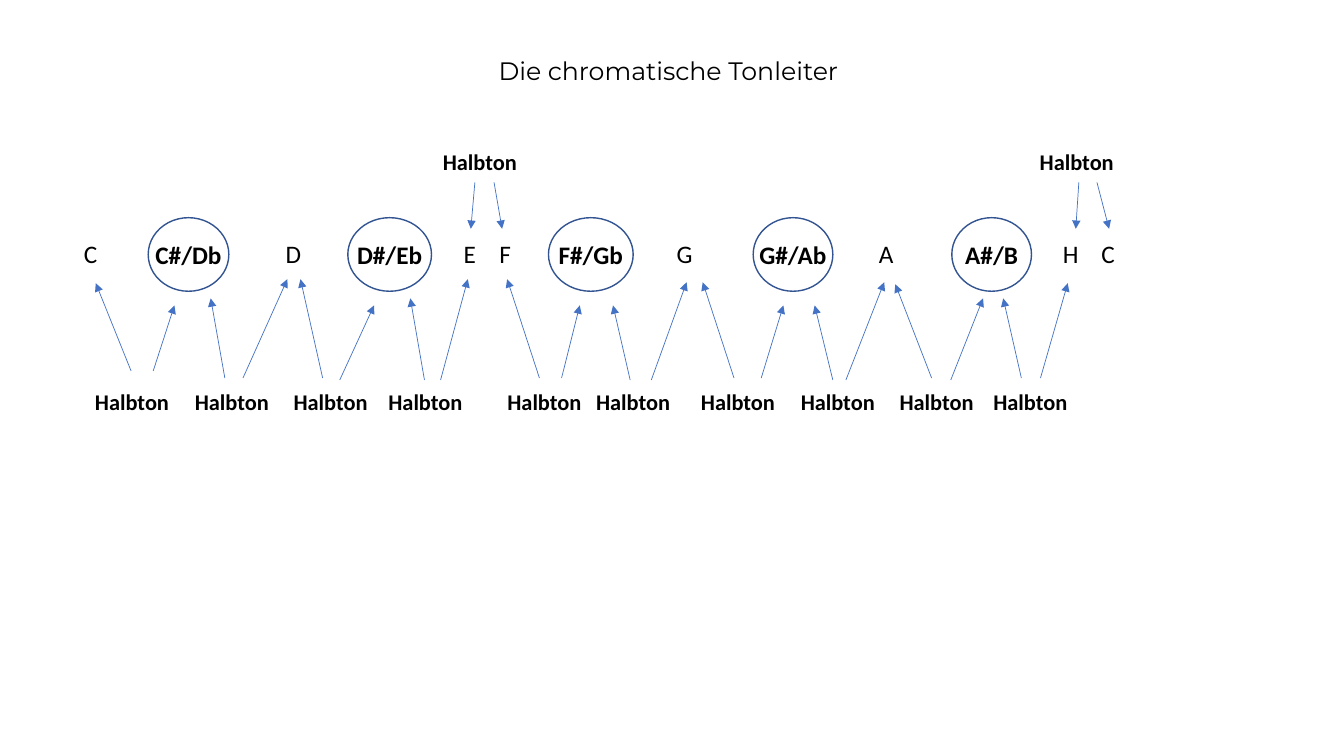
from dataclasses import dataclass
from lxml import etree
from pptx import Presentation
from pptx import util as u
from pptx.dml.color import RGBColor
from pptx.enum import shapes, text
from pptx.oxml.ns import qn


@dataclass(frozen=True)
class Theme:
    ink: RGBColor = RGBColor.from_string("000000")
    ring: RGBColor = RGBColor.from_string("325491")
    arrow: RGBColor = RGBColor.from_string("4472C4")
    body: str = "Calibri"
    head: str = "Montserrat"
    large: int = 18
    small: int = 16


class Deck:
    def __init__(self, theme):
        self.theme = theme
        self.file = Presentation()
        self.file.slide_width = u.Inches(13.33)
        self.file.slide_height = u.Inches(7.5)
        self.slide = self.file.slides.add_slide(self.file.slide_layouts[6])

    def letter(self, shape, words, size, bold=False, face=None):
        frame = shape.text_frame
        style = dict(margin_left=0, margin_right=0, margin_top=0,
                     margin_bottom=0, word_wrap=True,
                     vertical_anchor=text.MSO_ANCHOR.MIDDLE)
        for key, value in style.items():
            setattr(frame, key, value)
        line = frame.paragraphs[0]
        line.alignment = text.PP_ALIGN.CENTER
        run = line.add_run()
        run.text = words
        style = dict(name=face or self.theme.body, size=u.Pt(size), bold=bold)
        for key, value in style.items():
            setattr(run.font, key, value)
        run.font.color.rgb = self.theme.ink

    def label(self, words, x, y, size, bold=False, face=None, width=1):
        box = self.slide.shapes.add_textbox(
            u.Inches(x - width / 2), u.Inches(y - 0.2),
            u.Inches(width), u.Inches(0.4))
        self.letter(box, words, size, bold, face)

    def ring(self, words, x, width):
        oval = self.slide.shapes.add_shape(
            shapes.MSO_SHAPE.OVAL, u.Inches(x), u.Inches(2.16),
            u.Inches(width), u.Inches(0.73))
        oval.shadow.inherit = False
        oval.fill.background()
        oval.line.color.rgb = self.theme.ring
        oval.line.width = u.Pt(1)
        self.letter(oval, words, self.theme.large, True)
        oval.text_frame.word_wrap = False

    def arrow(self, start, end):
        line = self.slide.shapes.add_connector(
            shapes.MSO_CONNECTOR.STRAIGHT, *map(u.Inches, start + end))
        line.line.color.rgb = self.theme.arrow
        line.line.width = u.Pt(0.5)
        part = line._element.spPr
        tip = etree.SubElement(part.find(qn("a:ln")), qn("a:tailEnd"))
        tip.set("type", "triangle")
        etree.SubElement(part, qn("a:effectLst"))

    def step(self, x, y, arrows):
        self.label("Halbton", x, y, self.theme.small, True)
        for start, end in arrows:
            self.arrow(start, end)


RINGS = [("C#/Db", 1.47, 0.8), ("D#/Eb", 3.45, 0.83), ("F#/Gb", 5.44, 0.84),
         ("G#/Ab", 7.47, 0.79), ("A#/B", 9.44, 0.79)]
NOTES = [("C", 0.9), ("D", 2.91), ("E", 4.66), ("F", 5.01), ("G", 6.79),
         ("A", 8.79), ("H", 10.62), ("C", 10.99)]
UPPER = [(4.76, (4.71, 4.67), (4.9, 4.98)),
         (10.68, (10.7, 10.67), (10.88, 11))]
LOWER = [
    (1.31, ((1.3, 3.68), (0.95, 2.81)), ((1.52, 3.68), (1.73, 3.03))),
    (2.3, ((2.23, 3.75), (2.09, 2.96)), ((2.41, 3.75), (2.85, 2.77))),
    (3.28, ((3.2, 3.75), (2.98, 2.77)), ((3.37, 3.77), (3.71, 3.03))),
    (4.22, ((4.21, 3.77), (4.07, 2.96)), ((4.37, 3.77), (4.64, 2.77))),
    (5.4, ((5.35, 3.75), (5.03, 2.77)), ((5.57, 3.75), (5.75, 3.03))),
    (6.28, ((6.25, 3.77), (6.08, 3.03)), ((6.46, 3.77), (6.81, 2.8))),
    (7.32, ((7.28, 3.75), (6.97, 2.8)), ((7.55, 3.75), (7.77, 3.03))),
    (8.31, ((8.26, 3.77), (8.08, 3.03)), ((8.39, 3.77), (8.77, 2.8))),
    (9.29, ((9.24, 3.75), (8.88, 2.82)), ((9.43, 3.77), (9.75, 2.96))),
    (10.22, ((10.13, 3.75), (9.95, 2.96)), ((10.32, 3.75), (10.59, 2.81))),
]


def main():
    theme = Theme()
    deck = Deck(theme)
    deck.label("Die chromatische Tonleiter", 6.63, 0.7, theme.large,
               face=theme.head, width=6)
    for words, x, width in RINGS:
        deck.ring(words, x, width)
    for words, x in NOTES:
        deck.label(words, x, 2.51, theme.large, width=0.3)
    for x, *pairs in UPPER:
        deck.step(x, 1.6, [((a, 1.81), (b, 2.27)) for a, b in pairs])
    for x, *arrows in LOWER:
        deck.step(x, 3.98, arrows)
    deck.file.save("out.pptx")


if __name__ == "__main__":
    main()
